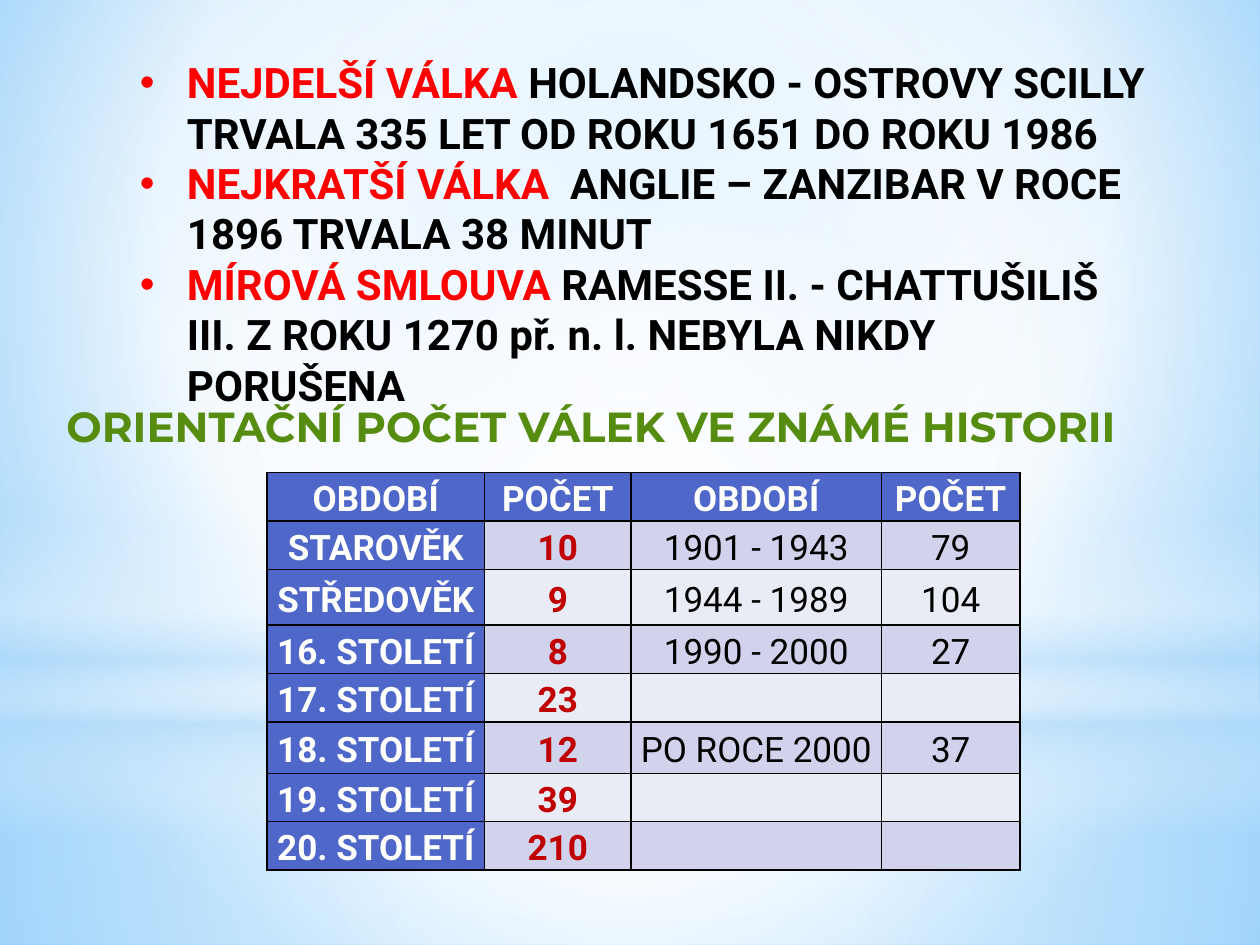
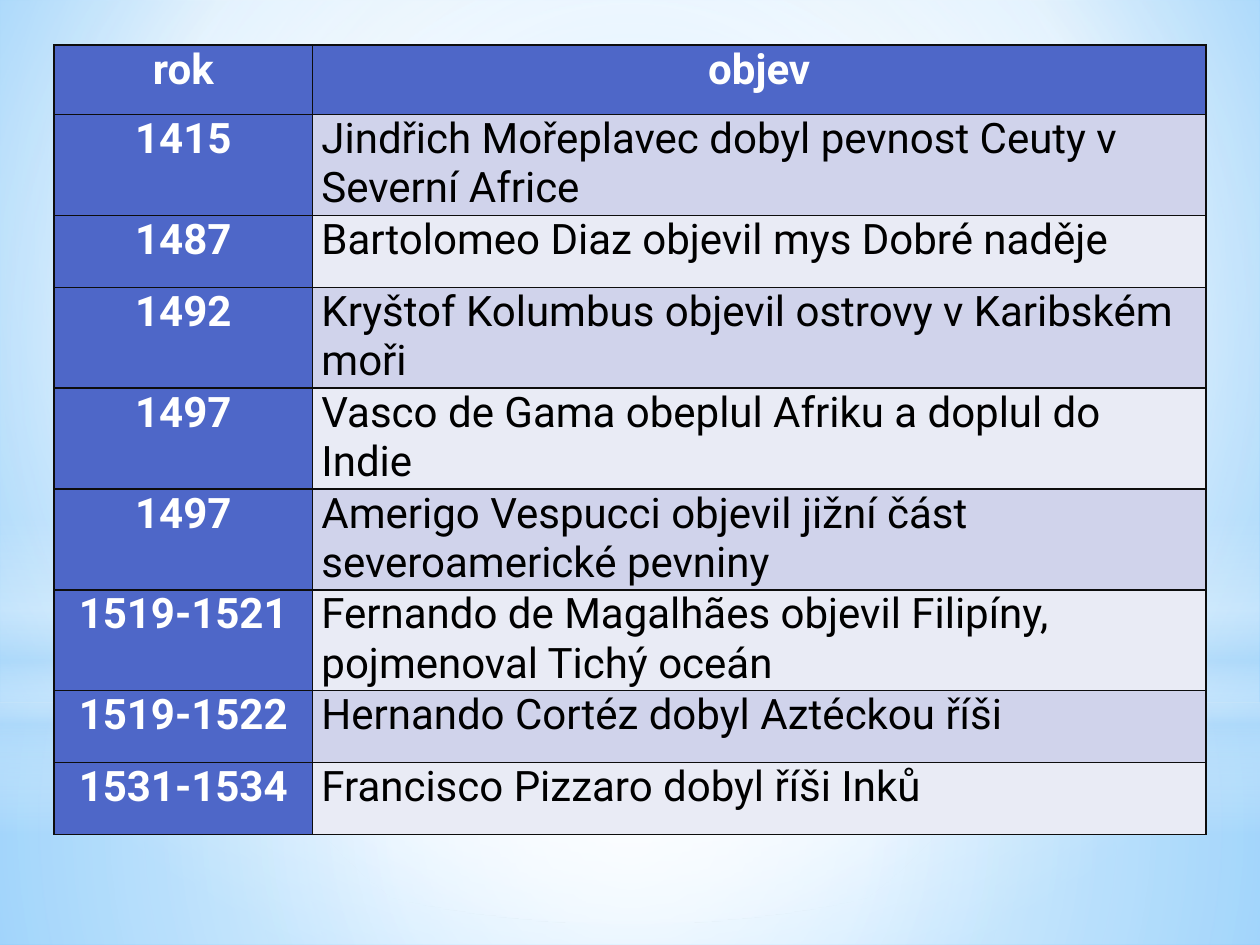
from collections import namedtuple
from dataclasses import dataclass

from lxml.etree import SubElement
from pptx import Presentation
from pptx.dml.color import RGBColor as Rgb
from pptx.enum.shapes import MSO_SHAPE as Preset
from pptx.enum.text import MSO_ANCHOR as Anchor
from pptx.enum.text import MSO_AUTO_SIZE as AutoSize
from pptx.enum.text import PP_ALIGN as Align
from pptx.oxml import parse_xml
from pptx.oxml.ns import nsdecls, qn
from pptx.util import Cm, Pt

Box = namedtuple("Box", "left top width height")


@dataclass(frozen=True)
class Theme:
    body_font: str = "Roboto"
    heading_font: str = "Montserrat"
    large: int = 24
    medium: int = 20
    black: str = "000000"
    white: str = "FFFFFF"
    near_black: str = "0D0D0D"
    red: str = "FF0000"
    dark_red: str = "C00000"
    green: str = "568D11"
    header_blue: str = "4E67C8"
    band_dark: str = "D0D3EB"
    band_light: str = "E9EBF5"
    sky: str = "9ED5FF"
    deep_sky: str = "5BB9FF"
    haze: str = "B4DCFA"


THEME = Theme()
PAGE = Box(0, 0, 25.4, 19.05)
CENTRE = (50, 50, 50, 50)

# Gradient stops: position %, colour, opacity %
SKY_STOPS = [(0, THEME.sky, 100), (60, THEME.white, 100), (100, THEME.deep_sky, 100)]
GROUND_STOPS = [(0, THEME.white, 91), (37, THEME.white, 76), (100, THEME.haze, 79)]
AIR_STOPS = [(0, THEME.white, 89), (48, THEME.white, 62), (100, THEME.haze, 79)]
HORIZON_STOPS = [(0, THEME.white, 0), (29, THEME.white, 30), (45, THEME.haze, 40),
                 (55, THEME.white, 26), (65, THEME.haze, 60), (100, THEME.white, 0)]
GLOW_STOPS = [(0, THEME.white, 100), (56, THEME.white, 0)]

WAR_FACTS = [
    ("NEJDELŠÍ VÁLKA",
     " HOLANDSKO - OSTROVY SCILLY TRVALA 335 LET OD ROKU 1651 DO ROKU 1986"),
    ("NEJKRATŠÍ VÁLKA  ", "ANGLIE – ZANZIBAR V ROCE 1896 TRVALA 38 MINUT"),
    ("MÍROVÁ SMLOUVA ",
     "RAMESSE II. - CHATTUŠILIŠ III. Z ROKU 1270 př. n. l. NEBYLA NIKDY PORUŠENA"),
]
WAR_COUNTS = [
    ("OBDOBÍ", "POČET", "OBDOBÍ", "POČET"),
    ("STAROVĚK", "10", "1901 - 1943", "79"),
    ("STŘEDOVĚK", "9", "1944 - 1989", "104"),
    ("16. STOLETÍ", "8", "1990 - 2000", "27"),
    ("17. STOLETÍ", "23", "", ""),
    ("18. STOLETÍ", "12", "PO ROCE 2000", "37"),
    ("19. STOLETÍ", "39", "", ""),
    ("20. STOLETÍ", "210", "", ""),
]
DISCOVERIES = [
    ("rok", "objev"),
    ("1415", "Jindřich Mořeplavec dobyl pevnost Ceuty v Severní Africe"),
    ("1487", "Bartolomeo Diaz objevil mys Dobré naděje"),
    ("1492", "Kryštof Kolumbus objevil ostrovy v Karibském moři"),
    ("1497", "Vasco de Gama obeplul Afriku a doplul do Indie"),
    ("1497", "Amerigo Vespucci objevil jižní část severoamerické pevniny"),
    ("1519-1521", "Fernando de Magalhães objevil Filipíny, pojmenoval Tichý oceán"),
    ("1519-1522", "Hernando Cortéz dobyl Aztéckou říši"),
    ("1531-1534", "Francisco Pizzaro dobyl říši Inků"),
]


def set_values(target, values):
    for name, value in values.items():
        setattr(target, name, value)


def in_cm(box):
    return [Cm(length) for length in box]


def add_span(para, text, color, size=THEME.large, bold=True, name=THEME.body_font):
    span = para.add_run()
    span.text = text
    set_values(span.font, {"size": Pt(size), "bold": bold, "name": name})
    span.font.color.rgb = Rgb.from_string(color)


def fill_gradient(fill, properties, stops, focus=None):
    """Fill with a gradient, circular around focus or else running downwards."""
    fill.solid()
    gradient = parse_xml(f'<a:gradFill {nsdecls("a")} rotWithShape="1"/>')
    stop_list = SubElement(gradient, qn("a:gsLst"))
    for position, color, opacity in stops:
        stop = SubElement(stop_list, qn("a:gs"), pos=str(position * 1000))
        tint = SubElement(stop, qn("a:srgbClr"), val=color)
        if opacity < 100:
            SubElement(tint, qn("a:alpha"), val=str(opacity * 1000))
    if focus:
        circle = SubElement(gradient, qn("a:path"), path="circle")
        sides = {side: str(share * 1000) for side, share in zip("ltrb", focus)}
        SubElement(circle, qn("a:fillToRect"), **sides)
    else:
        SubElement(gradient, qn("a:lin"), ang="5400000", scaled="0")
    properties.replace(properties.find(qn("a:solidFill")), gradient)


def draw_sky(page, box):
    fill = page.background.fill
    fill.solid()
    fill_gradient(fill, page.element.find(".//" + qn("p:bgPr")), SKY_STOPS, (20, 10, 20, 60))
    horizon = 14.17
    layers = [
        (Preset.RECTANGLE, horizon, box.height - horizon, GROUND_STOPS, CENTRE),
        (Preset.RECTANGLE, 0, horizon, AIR_STOPS, CENTRE),
        (Preset.RECTANGLE, 10.46, 6.35, HORIZON_STOPS, None),
        (Preset.OVAL, 4.45, horizon, GLOW_STOPS, CENTRE),
    ]
    for preset, top, height, stops, focus in layers:
        layer = page.shapes.add_shape(
            preset, *in_cm((box.left, box.top + top, box.width, height)))
        layer.shadow.inherit = False
        layer.line.fill.background()
        fill_gradient(layer.fill, layer.element.spPr, stops, focus)


def add_page(deck):
    page = deck.slides.add_slide(deck.slide_layouts[6])
    draw_sky(page, PAGE)
    return page


def add_text_frame(page, box):
    frame = page.shapes.add_textbox(*in_cm(box)).text_frame
    set_values(frame, {"word_wrap": True, "auto_size": AutoSize.SHAPE_TO_FIT_TEXT})
    return frame


def add_facts(page, box, facts):
    frame = add_text_frame(page, box)
    indent = Cm(0.95)
    for index, (topic, detail) in enumerate(facts):
        para = frame.add_paragraph() if index else frame.paragraphs[0]
        add_span(para, topic, THEME.red)
        add_span(para, detail, THEME.black)
        layout = para._p.get_or_add_pPr()
        layout.set("marL", str(indent))
        layout.set("indent", str(-indent))
        SubElement(layout, qn("a:buFont"), typeface="Arial")
        SubElement(layout, qn("a:buChar"), char="•")


def add_heading(page, box, text):
    para = add_text_frame(page, box).paragraphs[0]
    add_span(para, text, THEME.green, name=THEME.heading_font)


def draw_borders(cell, color):
    properties = cell._tc.get_or_add_tcPr()
    for side in "LRTB":
        line = SubElement(properties, qn(f"a:ln{side}"), w=str(Pt(1)))
        SubElement(SubElement(line, qn("a:solidFill")), qn("a:srgbClr"), val=color)


def cell_fill(row, column):
    if row == 0 or column == 0:
        return THEME.header_blue
    return THEME.band_dark if row % 2 else THEME.band_light


def add_grid(page, corner, widths, heights, rows, border, cell_format, write_text):
    """Draw a table; write_text(para, text, row, column) styles each filled cell."""
    box = Box(*corner, sum(widths), sum(heights))
    table = page.shapes.add_table(len(rows), len(widths), *in_cm(box)).table
    set_values(table, {"first_row": False, "horz_banding": False})
    for column, width in zip(table.columns, widths):
        column.width = Cm(width)
    for row, height in zip(table.rows, heights):
        row.height = Cm(height)
    for row, texts in enumerate(rows):
        for column, text in enumerate(texts):
            cell = table.cell(row, column)
            set_values(cell, {"margin_top": 0, "margin_bottom": 0, **cell_format})
            draw_borders(cell, border)
            cell.fill.solid()
            cell.fill.fore_color.rgb = Rgb.from_string(cell_fill(row, column))
            if text:
                write_text(cell.text_frame.paragraphs[0], text, row, column)


def write_count(para, text, row, column):
    set_values(para, {"alignment": Align.CENTER, "line_spacing": 1.15})
    if row == 0 or column == 0:
        color = THEME.white
    else:
        color = THEME.dark_red if column == 1 else THEME.black
    add_span(para, text, color, THEME.medium, bold=color != THEME.black)


def write_discovery(para, text, row, column):
    is_header = row == 0 or column == 0
    set_values(para, {"alignment": Align.CENTER if is_header else Align.LEFT,
                      "space_before": Pt(6)})
    add_span(para, text, THEME.white if is_header else THEME.black, bold=is_header)


def build_wars_page(deck):
    page = add_page(deck)
    add_facts(page, Box(2.57, 1.02, 20.85, 6.4), WAR_FACTS)
    heights = [0.97, 0.97, 1.12, 0.97, 0.97, 1.04, 0.97, 0.97]
    cell_format = {"margin_left": Cm(0.15), "margin_right": Cm(0.15),
                   "vertical_anchor": Anchor.MIDDLE}
    add_grid(page, (5.38, 9.53), [4.39, 2.95, 5.05, 2.79], heights, WAR_COUNTS,
             THEME.black, cell_format, write_count)
    add_heading(page, Box(1.09, 7.95, 23.19, 1.27),
                "ORIENTAČNÍ POČET VÁLEK VE ZNÁMÉ HISTORII")


def build_discoveries_page(deck):
    page = add_page(deck)
    one_line, two_lines = 1.45, 2.03
    longest_line = 41
    heights = [1.4] + [two_lines if len(text) > longest_line else one_line
                       for _, text in DISCOVERIES[1:]]
    cell_format = {"margin_left": Cm(0.18), "margin_right": Cm(0.18)}
    add_grid(page, (1.09, 0.91), [5.21, 18.01], heights, DISCOVERIES,
             THEME.near_black, cell_format, write_discovery)


def main():
    deck = Presentation()
    set_values(deck, {"slide_width": Cm(PAGE.width), "slide_height": Cm(PAGE.height)})
    build_wars_page(deck)
    build_discoveries_page(deck)
    deck.save("out.pptx")


if __name__ == "__main__":
    main()
